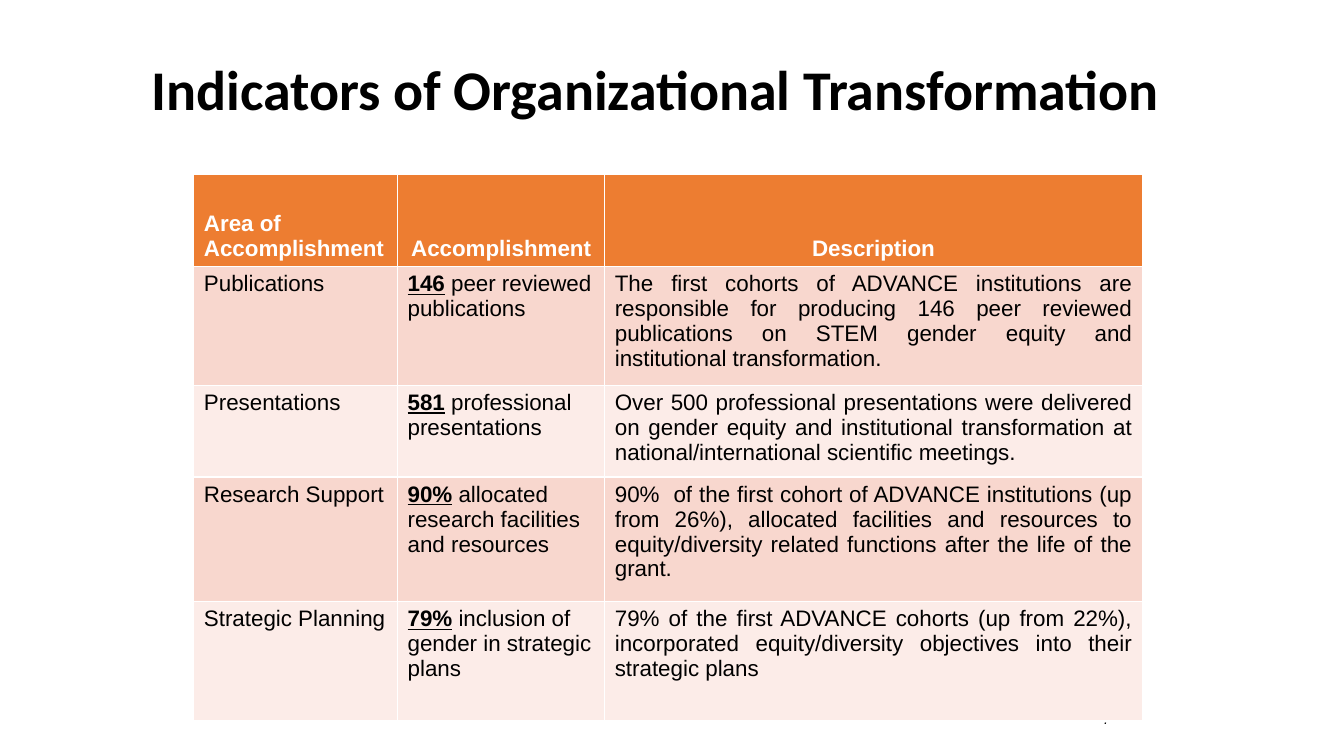
from pptx import Presentation
from pptx import util as u
from pptx.dml import color
from pptx.enum import text

Pt = u.Pt


def style(font, size, name, hex_color, bold=False):
    font.size = Pt(size)
    font.name = name
    font.bold = bold
    font.color.rgb = color.RGBColor.from_string(hex_color)


presentation = Presentation()
presentation.slide_width = Pt(960)
presentation.slide_height = Pt(540)
slide = presentation.slides.add_slide(presentation.slide_layouts[5])

title = slide.shapes.title
title.left, title.top, title.width, title.height = Pt(60), Pt(36), Pt(816), Pt(60)
title.text_frame.text = "Indicators of Organizational Transformation"
title.text_frame.vertical_anchor = text.MSO_ANCHOR.MIDDLE
paragraph = title.text_frame.paragraphs[0]
paragraph.alignment = text.PP_ALIGN.CENTER
paragraph.line_spacing = 0.9
style(paragraph.font, 40, "Calibri", "000000", bold=True)

headers = ["Area of Accomplishment", "Accomplishment", "Description"]
indicators = [
    ("Publications", "146", " peer reviewed publications",
     "The first cohorts of ADVANCE institutions are responsible for producing 146 peer reviewed "
     "publications on STEM gender equity and institutional transformation. "),
    ("Presentations", "581", " professional presentations",
     "Over 500 professional presentations were delivered on gender equity and institutional "
     "transformation at national/international scientific meetings."),
    ("Research Support", "90%", " allocated research facilities and resources",
     "90%  of the first cohort of ADVANCE institutions (up from 26%), allocated facilities and "
     "resources to equity/diversity related functions after the life of the grant."),
    ("Strategic Planning", "79%", " inclusion of gender in strategic plans",
     "79% of the first ADVANCE cohorts (up from 22%), incorporated equity/diversity objectives "
     "into their strategic plans"),
]
column_widths = [145.5, 148, 384]
row_heights = [65.5, 85, 65.5, 89, 85]
header_alignments = [text.PP_ALIGN.LEFT, text.PP_ALIGN.CENTER, text.PP_ALIGN.CENTER]
body_alignments = [text.PP_ALIGN.LEFT, text.PP_ALIGN.LEFT, text.PP_ALIGN.JUSTIFY]
body_fills = ["F8D7CE", "FCECE8"]

table = slide.shapes.add_table(
    len(row_heights), len(column_widths), Pt(138.5), Pt(124.8),
    Pt(sum(column_widths)), Pt(sum(row_heights))).table
for column, width in zip(table.columns, column_widths):
    column.width = Pt(width)

for row_index, height in enumerate(row_heights):
    table.rows[row_index].height = Pt(height)
    is_header = row_index == 0
    if is_header:
        row_texts = [[header] for header in headers]
        fill, font_color, alignments = "ED7D31", "FFFFFF", header_alignments
    else:
        area, figure, detail, description = indicators[row_index - 1]
        row_texts = [[area], [figure, detail], [description]]
        fill, font_color, alignments = body_fills[(row_index - 1) % 2], "000000", body_alignments
    for column_index, run_texts in enumerate(row_texts):
        cell = table.cell(row_index, column_index)
        cell.fill.solid()
        cell.fill.fore_color.rgb = color.RGBColor.from_string(fill)
        cell.vertical_anchor = text.MSO_ANCHOR.BOTTOM if is_header else text.MSO_ANCHOR.TOP
        paragraph = cell.text_frame.paragraphs[0]
        paragraph.alignment = alignments[column_index]
        style(paragraph.font, 16, "Arial", font_color, bold=is_header)
        for run_index, run_text in enumerate(run_texts):
            run = paragraph.add_run()
            run.text = run_text
            is_figure = len(run_texts) == 2 and run_index == 0
            style(run.font, 16, "Arial", font_color, bold=is_header or is_figure)
            run.font.underline = is_figure

footer = slide.shapes.add_textbox(Pt(180), Pt(504), Pt(618.5), Pt(19.5))
footer.text_frame.word_wrap = True
footer.text_frame.text = "."
paragraph = footer.text_frame.paragraphs[0]
paragraph.alignment = text.PP_ALIGN.RIGHT
style(paragraph.font, 10, "Arial", "000000")
paragraph.font.italic = True

presentation.save("out.pptx")
